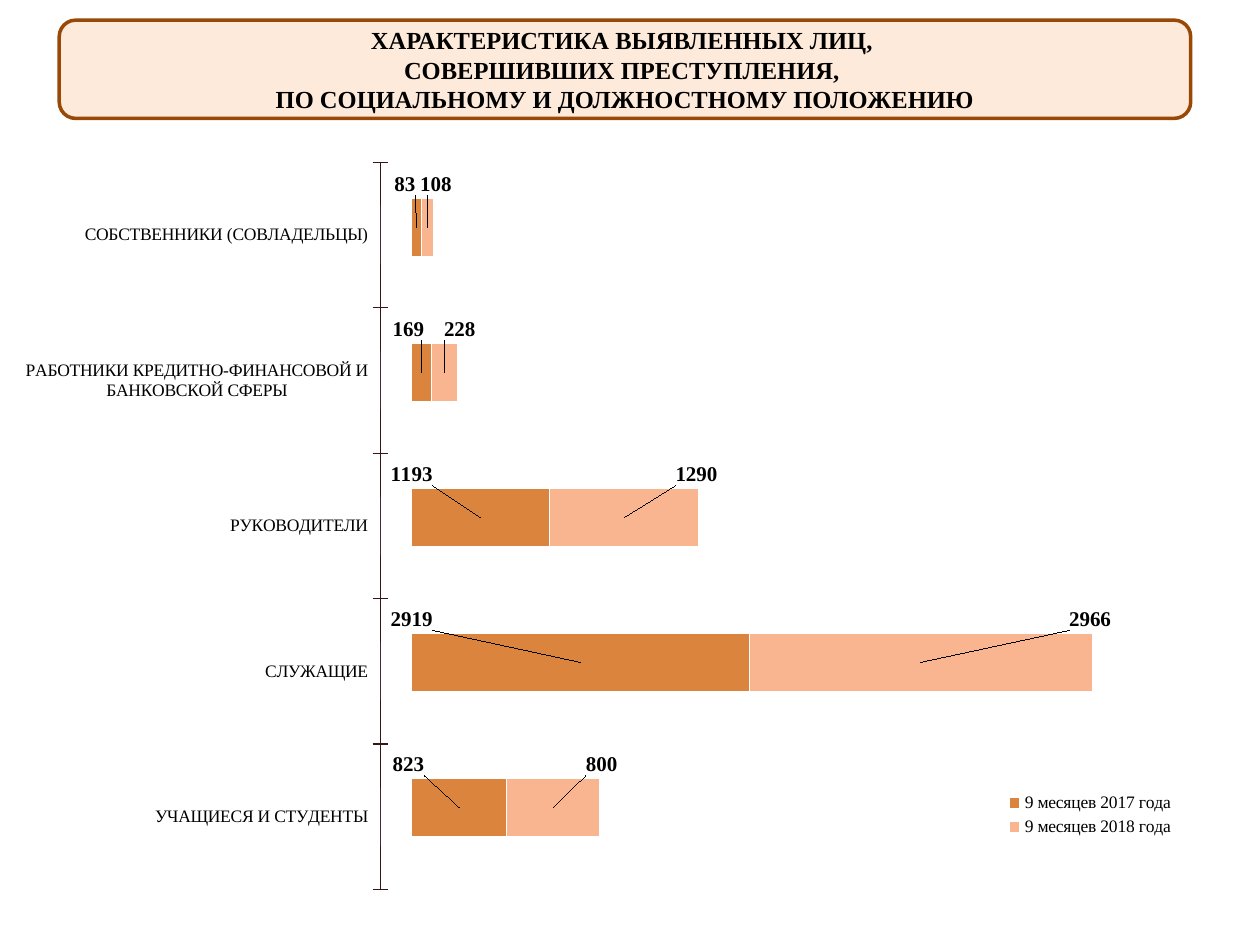
from lxml.etree import SubElement
from pptx import Presentation
from pptx.chart.data import CategoryChartData
from pptx.dml.color import RGBColor
from pptx.enum.chart import XL_CHART_TYPE as ChartType, XL_LEGEND_POSITION as LegendSide, XL_TICK_MARK as Tick
from pptx.enum.shapes import MSO_SHAPE as Shape
from pptx.enum.text import MSO_ANCHOR as Anchor, MSO_AUTO_SIZE as AutoSize, PP_ALIGN as Align
from pptx.oxml import parse_xml
from pptx.oxml.ns import nsdecls, qn
from pptx.util import Inches, Pt

COLORS = {"text": "000000", "panel": "FDEADA", "border": "984807",
          "axis": "381514", "year_2017": "DB843D", "year_2018": "F9B590", "gap": "FFFFFF"}
TITLE = ["ХАРАКТЕРИСТИКА ВЫЯВЛЕННЫХ ЛИЦ, ", "СОВЕРШИВШИХ ПРЕСТУПЛЕНИЯ, ",
         "ПО СОЦИАЛЬНОМУ И ДОЛЖНОСТНОМУ ПОЛОЖЕНИЮ"]
GROUPS = ["УЧАЩИЕСЯ И СТУДЕНТЫ", "СЛУЖАЩИЕ", "РУКОВОДИТЕЛИ",
          "РАБОТНИКИ КРЕДИТНО-ФИНАНСОВОЙ И БАНКОВСКОЙ СФЕРЫ", "СОБСТВЕННИКИ (СОВЛАДЕЛЬЦЫ)"]
COUNTS = {"9 месяцев 2017 года": [823, 2919, 1193, 169, 83],
          "9 месяцев 2018 года": [800, 2966, 1290, 228, 108]}
EMPTY = {name: [0] * len(GROUPS) for name in ("Series 1", "Series 2")}
COLUMNS, ROWS = 100, 75
AXIS_MAX = 7000
PLOT_WIDTH = 0.722
LABEL_RISE = -0.058
NO_LEADERS = (f'<c:extLst {nsdecls("c")}><c:ext uri="{{CE6537A1-D6FC-4f65-9D91-7224C49458BB}}" '
              'xmlns:c15="http://schemas.microsoft.com/office/drawing/2012/chart">'
              '<c15:showLeaderLines val="0"/></c:ext></c:extLst>')


def color(name):
    return RGBColor.from_string(COLORS[name])


def format_font(font, size=10, bold=False, fill="text"):
    font.name = "Times New Roman"
    font.size = Pt(size)
    font.bold = bold
    font.color.rgb = color(fill)


def write_text(para, text, align=Align.CENTER, spacing=1.0, **style):
    para.alignment = align
    para.line_spacing = spacing
    para.space_before = Pt(0)
    span = para.add_run()
    span.text = text
    format_font(span.font, **style)


def set_layout(parent, index, **values):
    for old in parent.findall(qn("c:layout")):
        parent.remove(old)
    layout = parse_xml(f"<c:layout {nsdecls('c')}/>")
    manual = SubElement(layout, qn("c:manualLayout"))
    for name, value in values.items():
        SubElement(manual, qn(f"c:{name}")).set("val", str(value))
    parent.insert(index, layout)


class Slide:
    def __init__(self, deck):
        self.deck = deck
        self.page = deck.slides.add_slide(deck.slide_layouts[5])

    def place(self, left, top, width, height):
        across, down = self.deck.slide_width / COLUMNS, self.deck.slide_height / ROWS
        return [int(left * across), int(top * down), int(width * across), int(height * down)]

    def panel(self, *cells):
        box = self.page.shapes.add_shape(Shape.ROUNDED_RECTANGLE, *self.place(*cells))
        box.shadow.inherit = False
        box.fill.solid()
        box.fill.fore_color.rgb = color("panel")
        box.line.color.rgb = color("border")
        box.line.width = Pt(2)
        self.page.shapes._spTree.insert(2, box._element)

    def title(self, lines, *cells):
        self.panel(*cells)
        box = self.page.shapes.title
        box.left, box.top, box.width, box.height = self.place(*cells)
        frame = box.text_frame
        frame.auto_size = AutoSize.NONE
        frame.vertical_anchor = Anchor.MIDDLE
        for number, line in enumerate(lines):
            para = frame.add_paragraph() if number else frame.paragraphs[0]
            write_text(para, line, size=14, bold=True)

    def bars(self, categories, series, maximum, plot_area, *cells):
        data = CategoryChartData()
        data.categories = categories
        for name, values in series.items():
            data.add_series(name, values)
        chart = self.page.shapes.add_chart(ChartType.BAR_STACKED, *self.place(*cells), data).chart
        chart.has_title = False
        chart.has_legend = False
        format_font(chart.font)
        chart.plots[0].gap_width = 150
        chart.plots[0].overlap = 100
        scale = chart.value_axis
        scale.minimum_scale, scale.maximum_scale = 0, maximum
        scale.has_major_gridlines = False
        scale.visible = False
        left, top, width, height = plot_area
        area = chart._chartSpace.find(f".//{qn('c:plotArea')}")
        set_layout(area, 0, layoutTarget="inner", xMode="edge", yMode="edge",
                   x=left, y=top, w=width, h=height)
        return chart

    def group_axis(self, *cells):
        chart = self.bars(GROUPS, EMPTY, 1, (0.443, 0.023, 0.074, 0.954), *cells)
        axis = chart.category_axis
        axis.major_tick_mark = Tick.CROSS
        axis.format.line.color.rgb = color("axis")
        axis.format.line.width = Pt(0.75)
        format_font(axis.tick_labels.font)

    def count_bars(self, *cells):
        numbers = [str(number + 1) for number in range(len(GROUPS))]
        chart = self.bars(numbers, COUNTS, AXIS_MAX, (0.239, 0.014, PLOT_WIDTH, 0.973), *cells)
        chart.category_axis.visible = False
        styles = [("year_2017", -1, -0.012, 0.003), ("year_2018", 1, 0.014, -0.004)]
        for series, (fill, side, nudge, per_digit) in zip(chart.plots[0].series, styles):
            series.format.fill.solid()
            series.format.fill.fore_color.rgb = color(fill)
            series.format.line.color.rgb = color("gap")
            series.format.line.width = Pt(0.75)
            labels = series.data_labels
            labels.show_value = True
            format_font(labels.font, size=12, bold=True)
            for number, value in enumerate(series.values):
                format_font(series.points[number].data_label.font, size=12, bold=True)
                shift = side * value / 2 / AXIS_MAX * PLOT_WIDTH + nudge + per_digit * len(f"{value:.0f}")
                label = labels._element.findall(qn("c:dLbl"))[number]
                set_layout(label, 1, x=round(shift, 4), y=LABEL_RISE)
            labels._element.append(parse_xml(NO_LEADERS))
        chart.has_legend = True
        legend = chart.legend
        legend.position = LegendSide.RIGHT
        legend.include_in_layout = False
        format_font(legend.font)
        set_layout(legend._element, 1, xMode="edge", yMode="edge",
                   x=0.764, y=0.865, w=0.16, h=0.07)


def main():
    deck = Presentation()
    deck.slide_width, deck.slide_height = Inches(10), Inches(7.5)
    slide = Slide(deck)
    slide.title(TITLE, 4.7, 1.6, 89.8, 7.8)
    slide.group_axis(2, 11.5, 63.6, 60.5)
    slide.count_bars(11.4, 11.5, 89, 59.1)
    deck.save("out.pptx")


if __name__ == "__main__":
    main()
